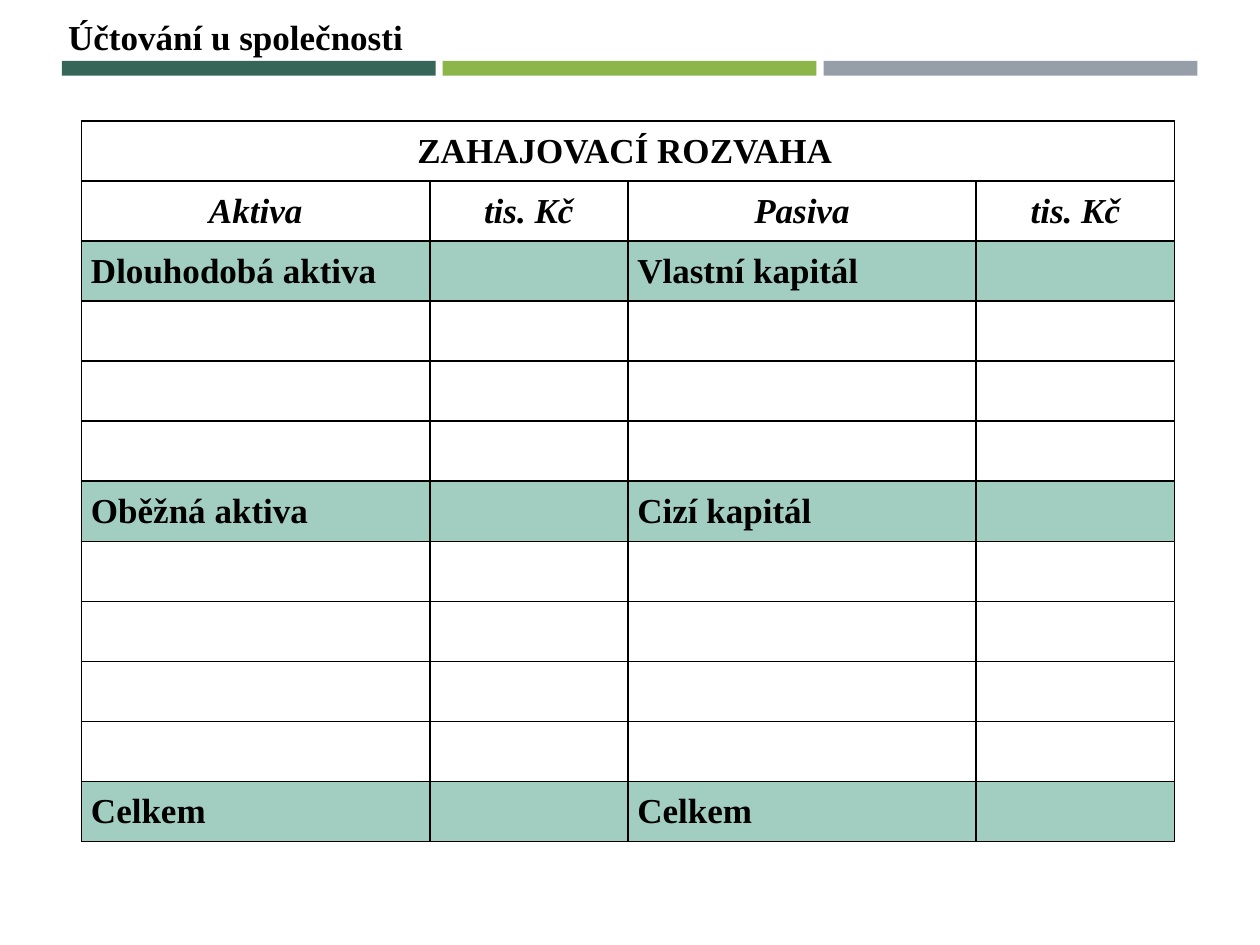
import pptx
import pptx.util
import pptx.dml.color
import pptx.enum.shapes
import pptx.enum.text
import pptx.oxml
import pptx.oxml.ns

Pt = pptx.util.Pt
ALIGN = pptx.enum.text.PP_ALIGN
ANCHOR = pptx.enum.text.MSO_ANCHOR
COLORS = {
    "text": "000000",
    "border": "000000",
    "section": "A2CEC1",
    "pine": "366658",
    "lime": "8CB64A",
    "steel": "969FA7",
}
ROW_COUNT = 12
HEADINGS = ["Aktiva", "tis. Kč", "Pasiva", "tis. Kč"]
SECTIONS = {
    2: ("Dlouhodobá aktiva", "Vlastní kapitál"),
    6: ("Oběžná aktiva", "Cizí kapitál"),
    11: ("Celkem", "Celkem"),
}


class BalanceSlide:
    font_name = "Times New Roman"
    font_size = 20
    border_width = 1

    def __init__(self, slide):
        self.slide = slide

    def rgb(self, color):
        return pptx.dml.color.RGBColor.from_string(COLORS[color])

    def add_text(self, paragraph, text, align, italic=False):
        paragraph.alignment = align
        run = paragraph.add_run()
        run.text = text
        run.font.name = self.font_name
        run.font.size = Pt(self.font_size)
        run.font.bold = True
        run.font.italic = italic
        run.font.color.rgb = self.rgb("text")

    def title(self, text, left, top, width, height):
        heading = self.slide.shapes.title
        heading.left, heading.top = Pt(left), Pt(top)
        heading.width, heading.height = Pt(width), Pt(height)
        frame = heading.text_frame
        frame.word_wrap = False
        frame.auto_size = pptx.enum.text.MSO_AUTO_SIZE.NONE
        frame.vertical_anchor = ANCHOR.TOP
        self.add_text(frame.paragraphs[0], text, ALIGN.LEFT)

    def bar(self, color, left, top, width, height):
        bar = self.slide.shapes.add_shape(
            pptx.enum.shapes.MSO_SHAPE.RECTANGLE,
            Pt(left), Pt(top), Pt(width), Pt(height))
        bar.shadow.inherit = False
        bar.fill.solid()
        bar.fill.fore_color.rgb = self.rgb(color)
        bar.line.fill.background()

    def table(self, left, top, widths, row_height, row_count):
        table = self.slide.shapes.add_table(
            row_count, len(widths), Pt(left), Pt(top),
            Pt(sum(widths)), Pt(row_height * row_count)).table
        table.first_row = table.horz_banding = False
        for column, width in zip(table.columns, widths):
            column.width = Pt(width)
        for row in table.rows:
            row.height = Pt(row_height)
        for cell in table.iter_cells():
            cell.fill.background()
            cell.vertical_anchor = ANCHOR.MIDDLE
            cell.margin_left = cell.margin_right = Pt(5.4)
            cell.margin_top = cell.margin_bottom = 0
            self.borders(cell)
        return table

    def borders(self, cell):
        properties = cell._tc.get_or_add_tcPr()
        for position, side in enumerate("LRTB"):
            properties.insert(position, pptx.oxml.parse_xml(
                f'<a:ln{side} {pptx.oxml.ns.nsdecls("a")} w="{Pt(self.border_width)}">'
                f'<a:solidFill><a:srgbClr val="{COLORS["border"]}"/></a:solidFill>'
                f'</a:ln{side}>'))

    def shade(self, cell, color):
        cell.fill.solid()
        cell.fill.fore_color.rgb = self.rgb(color)


def main():
    deck = pptx.Presentation()
    deck.slide_width, deck.slide_height = Pt(720), Pt(540)
    page = BalanceSlide(deck.slides.add_slide(deck.slide_layouts[5]))

    for index, color in enumerate(("pine", "lime", "steel")):
        page.bar(color, 35.4 + index * 217.6, 34.8, 213.6, 8.4)
    page.title("Účtování u společnosti", 31.7, 5, 207.5, 31.5)

    balance = page.table(46.6, 69.2, [199, 113.2, 199, 113.5], 34.3, ROW_COUNT)
    balance.cell(0, 0).merge(balance.cell(0, 3))
    caption = balance.cell(0, 0).text_frame.paragraphs[0]
    caption.space_before = Pt(6)
    page.add_text(caption, "ZAHAJOVACÍ ROZVAHA ", ALIGN.CENTER)

    for column, heading in enumerate(HEADINGS):
        page.add_text(balance.cell(1, column).text_frame.paragraphs[0],
                      heading, ALIGN.CENTER, italic=True)

    for row, (assets, liabilities) in SECTIONS.items():
        for cell in balance.rows[row].cells:
            page.shade(cell, "section")
        page.add_text(balance.cell(row, 0).text_frame.paragraphs[0],
                      assets, ALIGN.LEFT)
        page.add_text(balance.cell(row, 2).text_frame.paragraphs[0],
                      liabilities, ALIGN.JUSTIFY)

    deck.save("out.pptx")


if __name__ == "__main__":
    main()
